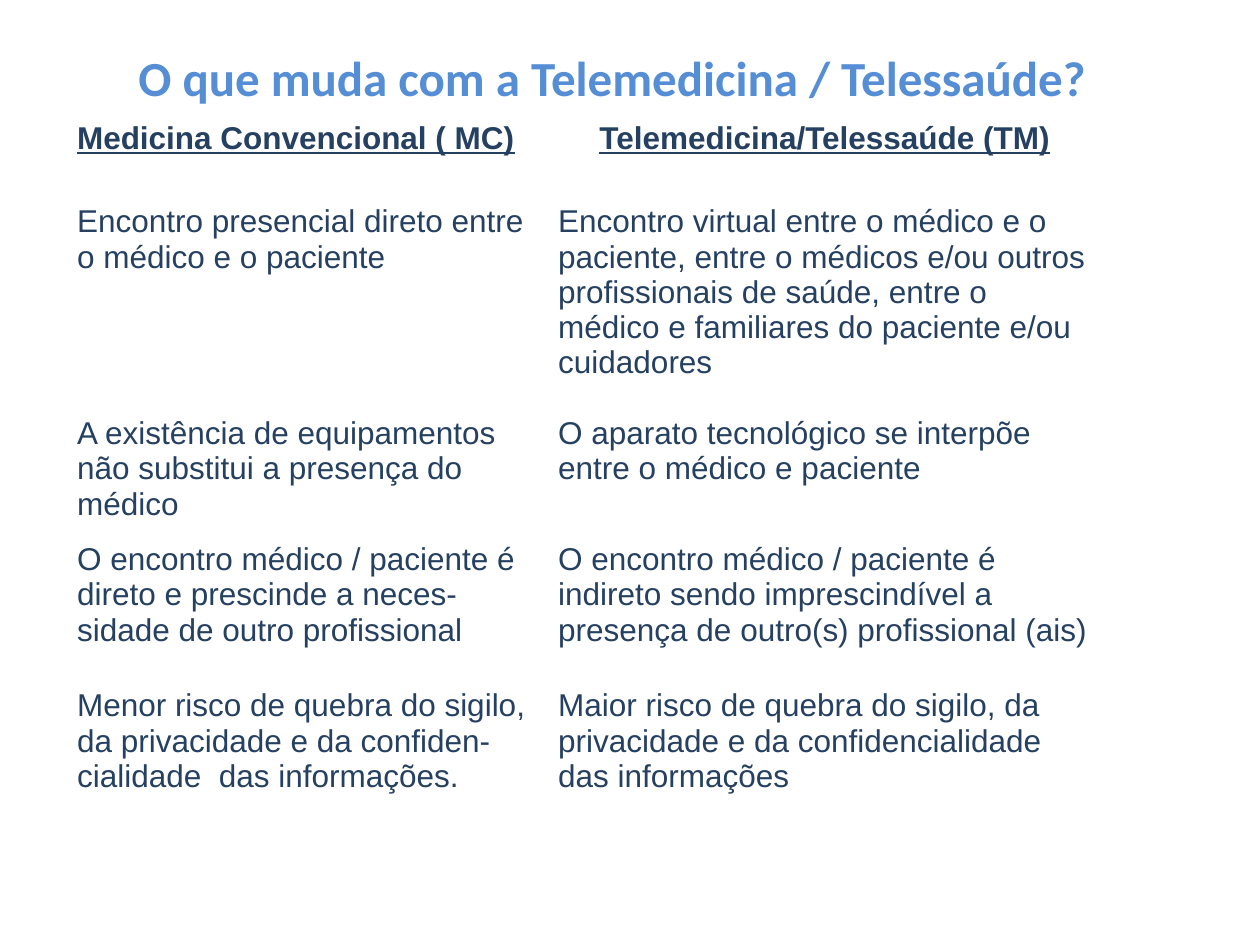
from pptx import Presentation
from pptx.dml.color import RGBColor
from pptx.enum.text import PP_ALIGN
from pptx.util import Cm, Pt

# Content
HEADING = "O que muda com a Telemedicina / Telessaúde?"
COMPARISON = [
    ("Medicina Convencional ( MC)", "Telemedicina/Telessaúde (TM)"),
    ("Encontro presencial direto entre o médico e o paciente",
     "Encontro virtual entre o médico e o paciente, entre o médicos e/ou outros "
     "profissionais de saúde, entre o médico e familiares do paciente e/ou cuidadores"),
    ("A existência de equipamentos não substitui a presença do médico",
     "O aparato tecnológico se interpõe entre o médico e paciente"),
    ("O encontro médico / paciente é direto e prescinde a neces-sidade de outro profissional",
     "O encontro médico / paciente é indireto sendo imprescindível a presença de "
     "outro(s) profissional (ais)"),
    ("Menor risco de quebra do sigilo, da privacidade e da confiden-cialidade  das informações.",
     "Maior risco de quebra do sigilo, da privacidade e da confidencialidade\n"
     "das informações"),
]
COLUMN_WIDTHS = [9.7, 11.25]
ROW_HEIGHTS = [1.68, 4.27, 2.54, 2.95, 2.95]
SKY, NAVY = "558ED5", "254061"


def style(paragraph, name, size, color, bold=False, underline=False):
    font = paragraph.font
    font.name, font.size = name, Pt(size)
    font.bold, font.underline = bold, underline
    font.color.rgb = RGBColor.from_string(color)


presentation = Presentation()
presentation.slide_width, presentation.slide_height = Cm(25.4), Cm(19.05)
slide = presentation.slides.add_slide(presentation.slide_layouts[6])

# Heading
heading = slide.shapes.add_textbox(Cm(2.54), Cm(0.84), Cm(24.33), Cm(1.45)).text_frame
heading.word_wrap = True
heading.text = HEADING
style(heading.paragraphs[0], "Calibri", 28, SKY, bold=True)

# Comparison table, without banding or fills
comparison = slide.shapes.add_table(
    len(COMPARISON), len(COLUMN_WIDTHS), Cm(1.3), Cm(2.31),
    Cm(sum(COLUMN_WIDTHS)), Cm(sum(ROW_HEIGHTS))).table
comparison.first_row = comparison.horz_banding = False
for column, width in zip(comparison.columns, COLUMN_WIDTHS):
    column.width = Cm(width)
for row, height in zip(comparison.rows, ROW_HEIGHTS):
    row.height = Cm(height)

for r, statements in enumerate(COMPARISON):
    is_header = r == 0
    for c, statement in enumerate(statements):
        cell = comparison.cell(r, c)
        cell.fill.background()
        cell.text = statement
        for paragraph in cell.text_frame.paragraphs:
            style(paragraph, "Arial", 18, NAVY, bold=is_header, underline=is_header)
            if is_header and c == 1:
                paragraph.alignment = PP_ALIGN.CENTER

presentation.save("out.pptx")
